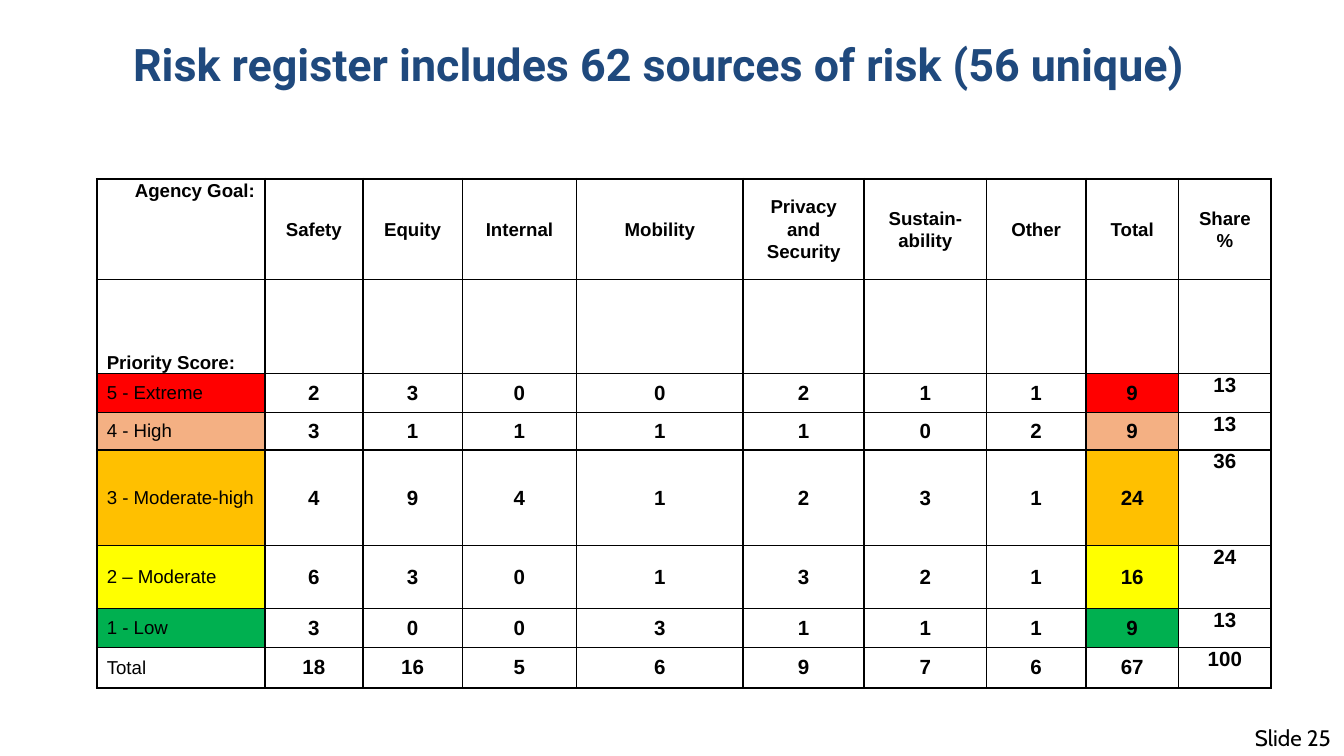
from lxml import etree
from pptx import Presentation
from pptx.dml.color import RGBColor
from pptx.enum.text import MSO_ANCHOR, PP_ALIGN
from pptx.oxml.ns import qn
from pptx.util import Inches, Pt

LEFT, CENTER, RIGHT = PP_ALIGN.LEFT, PP_ALIGN.CENTER, PP_ALIGN.RIGHT
TOP, MIDDLE, BOTTOM = MSO_ANCHOR.TOP, MSO_ANCHOR.MIDDLE, MSO_ANCHOR.BOTTOM
TITLE_ONLY = 5

COLORS = {
    "text": "000000",
    "title": "1F497D",
    "extreme": "FF0000",
    "high": "F4B083",
    "moderate_high": "FFC000",
    "moderate": "FFFF00",
    "low": "00B050",
}


def write_text(frame, text, size=10, font="Arial", color="text", bold=False,
               align=LEFT, line=None, space=0):
    paragraph = frame.paragraphs[0]
    paragraph.alignment = align
    paragraph.line_spacing = line
    paragraph.space_before = paragraph.space_after = Pt(space)
    run = paragraph.add_run()
    run.text = text
    run.font.size = Pt(size)
    run.font.name = font
    run.font.bold = bold
    run.font.color.rgb = RGBColor.from_string(COLORS[color])


def format_cell(cell, fill):
    properties = cell._tc.get_or_add_tcPr()
    for side in ("a:lnL", "a:lnR", "a:lnT", "a:lnB"):
        border = etree.SubElement(properties, qn(side), w=str(Pt(1)))
        solid = etree.SubElement(border, qn("a:solidFill"))
        etree.SubElement(solid, qn("a:srgbClr"), val=COLORS["text"])
    if fill:
        cell.fill.solid()
        cell.fill.fore_color.rgb = RGBColor.from_string(COLORS[fill])
    else:
        cell.fill.background()
    cell.margin_left = cell.margin_right = Pt(5.4)
    cell.margin_top = cell.margin_bottom = 0


# Widescreen 16:9 slide
presentation = Presentation()
presentation.slide_width = Inches(10)
presentation.slide_height = Inches(10) * 9 // 16
slide = presentation.slides.add_slide(presentation.slide_layouts[TITLE_ONLY])

# Title
title = slide.shapes.title
title.left, title.top = Inches(0.89), Inches(0.12)
title.width, title.height = Inches(8.9), Inches(0.71)
title.text_frame.vertical_anchor = MIDDLE
write_text(title.text_frame, "Risk register includes 62 sources of risk (56 unique)",
           size=24, font="Roboto", color="title", bold=True)

# Risk table
goals = ["Safety", "Equity", "Internal", "Mobility", "Privacy and Security",
         "Sustain-ability", "Other", "Total", "Share %"]
scores = [
    ("5 - Extreme", "extreme", [2, 3, 0, 0, 2, 1, 1, 9, 13]),
    ("4 - High", "high", [3, 1, 1, 1, 1, 0, 2, 9, 13]),
    ("3 - Moderate-high", "moderate_high", [4, 9, 4, 1, 2, 3, 1, 24, 36]),
    ("2 – Moderate", "moderate", [6, 3, 0, 1, 3, 2, 1, 16, 24]),
    ("1 - Low", "low", [3, 0, 0, 3, 1, 1, 1, 9, 13]),
    ("Total", None, [18, 16, 5, 6, 9, 7, 6, 67, 100]),
]
column_widths = [1.25, 0.73, 0.74, 0.85, 1.24, 0.9, 0.91, 0.74, 0.69, 0.69]
row_heights = [0.75, 0.7, 0.29, 0.28, 0.71, 0.47, 0.29, 0.3]
total_column = goals.index("Total") + 1
share_column = goals.index("Share %") + 1

table = slide.shapes.add_table(len(row_heights), len(column_widths), Inches(0.72),
                               Inches(1.33), Inches(8.74), Inches(3.79)).table
for column, width in zip(table.columns, column_widths):
    column.width = Inches(width)
for row, height in zip(table.rows, row_heights):
    row.height = Inches(height)

# Heading rows
heading = {"bold": True, "line": Pt(12), "space": 3}
for column in range(len(column_widths)):
    for row in range(2):
        format_cell(table.cell(row, column), None)
write_text(table.cell(0, 0).text_frame, "Agency Goal:", align=RIGHT, **heading)
for column, goal in enumerate(goals, start=1):
    cell = table.cell(0, column)
    cell.vertical_anchor = MIDDLE
    write_text(cell.text_frame, goal, align=CENTER, **heading)
table.cell(1, 0).vertical_anchor = BOTTOM
write_text(table.cell(1, 0).text_frame, "Priority Score:", **heading)

# Score rows
for row, (label, color, values) in enumerate(scores, start=2):
    for column, value in enumerate([label, *values]):
        cell = table.cell(row, column)
        format_cell(cell, color if column in (0, total_column) else None)
        cell.vertical_anchor = TOP if column == share_column else MIDDLE
        if column == 0:
            write_text(cell.text_frame, label, space=1)
        else:
            write_text(cell.text_frame, str(value), size=11, bold=True,
                       align=CENTER, space=1)

# Slide number
number_box = slide.shapes.add_textbox(Inches(5.47), Inches(5.34), Inches(4.53), Inches(0.3))
number_box.text_frame.word_wrap = True
write_text(number_box.text_frame, "Slide 25", size=12, font="Cabin", align=RIGHT)

presentation.save("out.pptx")
